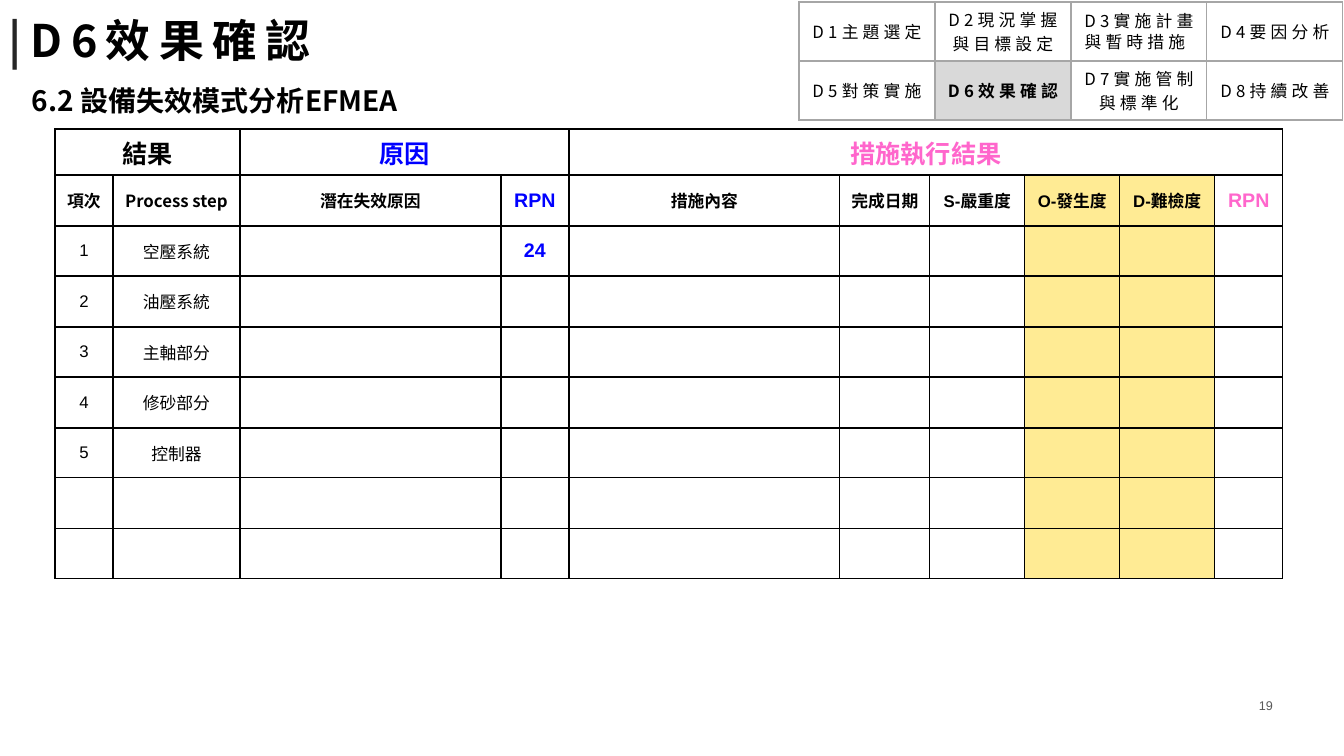
from dataclasses import dataclass
from itertools import product

from lxml.etree import SubElement
from pptx import Presentation
from pptx.dml.color import RGBColor
from pptx.enum.text import MSO_ANCHOR, PP_ALIGN
from pptx.oxml import parse_xml
from pptx.oxml.ns import nsdecls, qn
from pptx.util import Pt

TITLE = ("|", "D6效果確認")
SUBTITLE = "6.2 設備失效模式分析EFMEA"
PAGE_NUMBER = "19"
STEPS = [
    ["D1主題選定", "D2現況掌握\n與目標設定", "D3實施計畫\n與暫時措施 ", "D4要因分析"],
    ["D5對策實施", "D6效果確認", "D7實施管制\n與標準化", "D8持續改善"],
]
CURRENT_STEP = (1, 1)
TIGHT_STEP = (0, 2)
GROUPS = [("結果", 0, 1), ("原因", 2, 3), ("措施執行結果", 4, 9)]
HEADINGS = ["項次", "Process step", "潛在失效原因", "RPN", "措施內容",
            "完成日期", "S-嚴重度", "O-發生度", "D-難檢度", "RPN"]
PROCESSES = [("空壓系統", "24"), ("油壓系統", ""), ("主軸部分", ""),
             ("修砂部分", ""), ("控制器", "")]
RATED_COLUMNS = (7, 8)
CAUSE_RPN, RESULT_RPN = 3, 9

SLIDE_SIZE = (1344, 756)
TITLE_BOX = (2, 2, 797, 76)
SUBTITLE_BOX = (22, 78, 430, 44)
PAGE_BOX = (1212, 690, 71, 31)
STEPS_ORIGIN = (799, 2)
STEP_WIDTHS, STEP_HEIGHTS = [136] * 4, [59] * 2
EFMEA_ORIGIN = (55, 129)
EFMEA_WIDTHS = [58, 127, 261, 68, 271, 90, 95, 95, 95, 68]
EFMEA_HEIGHTS = [46] + [51, 50] * 4


@dataclass(frozen=True)
class Theme:
    cjk: str = "Noto Sans CJK SC"
    latin: str = "Arial"
    ink: str = "000000"
    bar: str = "262626"
    page: str = "595959"
    white: str = "FFFFFF"
    current: str = "D9D9D9"
    step_line: str = "A6A6A6"
    rated: str = "FFEB94"
    cause: str = "0000FF"
    result: str = "FF66CC"
    title_size: int = 32
    subtitle_size: int = 20
    group_size: int = 18
    rpn_size: int = 14
    body_size: int = 12
    page_size: int = 9


theme = Theme()


def px(length):
    return round(length * 914400 / 100.8)


def style_run(run, size, color, bold=False, latin=theme.cjk, spacing=0):
    run.font.size = Pt(size)
    run.font.bold = bold
    run.font.color.rgb = RGBColor.from_string(color)
    run.font.name = latin
    properties = run._r.get_or_add_rPr()
    SubElement(properties, qn("a:ea")).set("typeface", theme.cjk)
    if spacing:
        properties.set("spc", str(spacing * 100))


def add_text(slide, box, text, inset=(10, 5)):
    frame = slide.shapes.add_textbox(*map(px, box)).text_frame
    frame.word_wrap = True
    frame.margin_left = frame.margin_right = px(inset[0])
    frame.margin_top = frame.margin_bottom = px(inset[1])
    frame.vertical_anchor = MSO_ANCHOR.MIDDLE
    frame.text = text
    return frame.paragraphs[0]


def add_grid(slide, origin, widths, heights, line):
    box = (*origin, sum(widths), sum(heights))
    grid = slide.shapes.add_table(len(heights), len(widths), *map(px, box)).table
    grid.first_row = grid.horz_banding = False
    for column, width in zip(grid.columns, widths):
        column.width = px(width)
    for row, height in zip(grid.rows, heights):
        row.height = px(height)
    for cell in grid.iter_cells():
        cell.margin_left = cell.margin_right = px(5)
        cell.vertical_anchor = MSO_ANCHOR.MIDDLE
        fill_cell(cell, theme.white)
        for position, side in enumerate("LRTB"):
            border = parse_xml(
                f'<a:ln{side} {nsdecls("a")} w="12700"><a:solidFill>'
                f'<a:srgbClr val="{line}"/></a:solidFill></a:ln{side}>')
            cell._tc.get_or_add_tcPr().insert(position, border)
    return grid


def fill_cell(cell, color):
    cell.fill.solid()
    cell.fill.fore_color.rgb = RGBColor.from_string(color)


def write_cell(cell, text, size, color=theme.ink, **style):
    cell.text_frame.text = text
    for paragraph in cell.text_frame.paragraphs:
        paragraph.alignment = PP_ALIGN.CENTER
        for run in paragraph.runs:
            style_run(run, size, color, **style)


def add_steps(slide):
    grid = add_grid(slide, STEPS_ORIGIN, STEP_WIDTHS, STEP_HEIGHTS, theme.step_line)
    for row, column in product(range(len(STEPS)), range(len(STEPS[0]))):
        write_cell(grid.cell(row, column), STEPS[row][column], theme.body_size,
                   bold=(row, column) == CURRENT_STEP, spacing=3)
    fill_cell(grid.cell(*CURRENT_STEP), theme.current)
    for paragraph in grid.cell(*TIGHT_STEP).text_frame.paragraphs:
        paragraph.line_spacing = 0.85


def add_efmea(slide):
    grid = add_grid(slide, EFMEA_ORIGIN, EFMEA_WIDTHS, EFMEA_HEIGHTS, theme.ink)
    group_colors = (theme.ink, theme.cause, theme.result)
    for (group, first, last), color in zip(GROUPS, group_colors):
        grid.cell(0, first).merge(grid.cell(0, last))
        write_cell(grid.cell(0, first), group, theme.group_size, color, bold=True)
    rpn_colors = {CAUSE_RPN: theme.cause, RESULT_RPN: theme.result}
    for column, heading in enumerate(HEADINGS):
        size = theme.rpn_size if column in rpn_colors else theme.body_size
        write_cell(grid.cell(1, column), heading, size,
                   rpn_colors.get(column, theme.ink), bold=True,
                   latin=theme.cjk if column < 2 else theme.latin)
    for number, (process, rpn) in enumerate(PROCESSES, 1):
        row = number + 1
        write_cell(grid.cell(row, 0), str(number), theme.body_size, latin=theme.latin)
        write_cell(grid.cell(row, 1), process, theme.body_size, latin=theme.latin)
        if rpn:
            write_cell(grid.cell(row, CAUSE_RPN), rpn, theme.rpn_size,
                       theme.cause, bold=True, latin=theme.latin)
    for row, column in product(range(1, len(EFMEA_HEIGHTS)), RATED_COLUMNS):
        fill_cell(grid.cell(row, column), theme.rated)


def main():
    deck = Presentation()
    deck.slide_width, deck.slide_height = map(px, SLIDE_SIZE)
    slide = deck.slides.add_slide(deck.slide_layouts[6])

    title = add_text(slide, TITLE_BOX, TITLE[0], inset=(7, 4))
    title.add_run().text = TITLE[1]
    for run, color in zip(title.runs, (theme.bar, theme.ink)):
        style_run(run, theme.title_size, color, bold=True, spacing=6)

    add_steps(slide)
    add_efmea(slide)

    subtitle = add_text(slide, SUBTITLE_BOX, SUBTITLE)
    style_run(subtitle.runs[0], theme.subtitle_size, theme.ink, bold=True)

    page = add_text(slide, PAGE_BOX, PAGE_NUMBER)
    page.alignment = PP_ALIGN.RIGHT
    style_run(page.runs[0], theme.page_size, theme.page, latin=theme.latin)

    deck.save("out.pptx")


if __name__ == "__main__":
    main()
